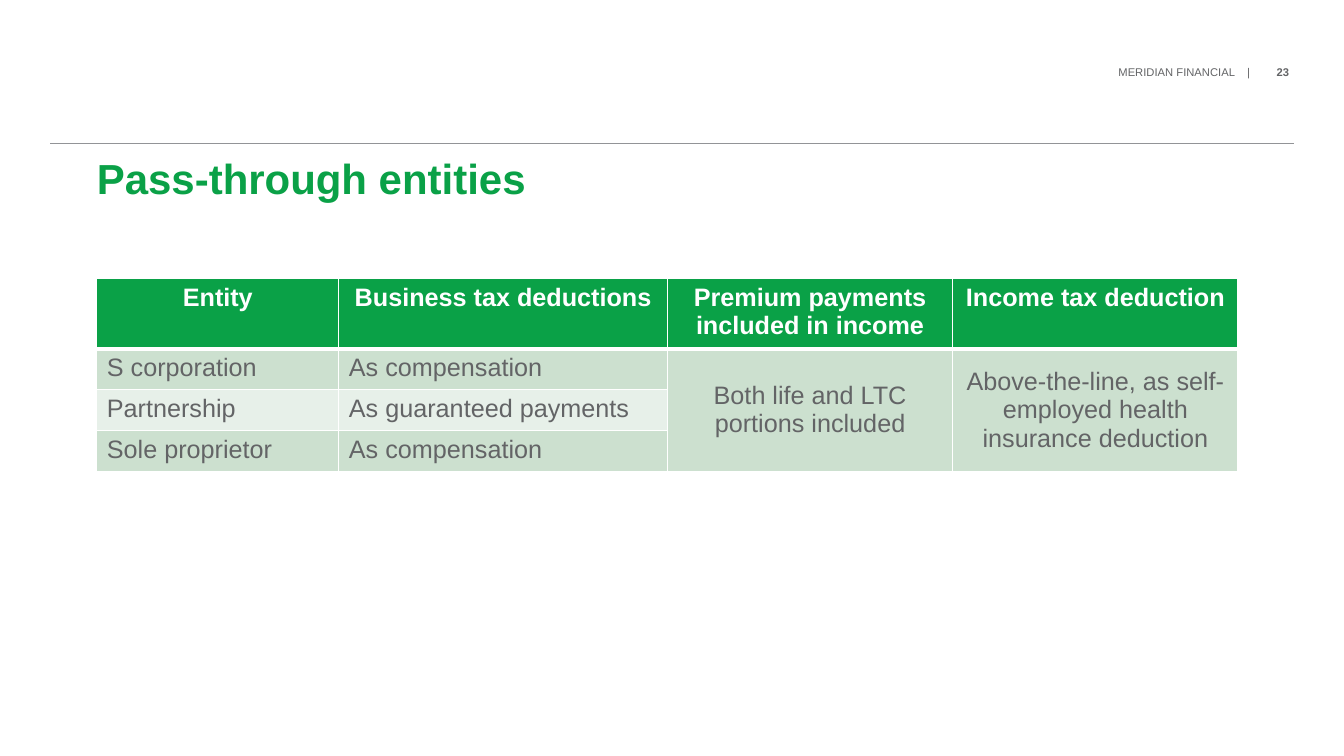
import pptx
import pptx.util
import pptx.dml.color
import pptx.enum.shapes
import pptx.enum.text
import pptx.oxml.ns
import lxml.etree

Cm = pptx.util.Cm
Pt = pptx.util.Pt
RGBColor = pptx.dml.color.RGBColor
ALIGN = pptx.enum.text.PP_ALIGN
ANCHOR = pptx.enum.text.MSO_ANCHOR
qn = pptx.oxml.ns.qn

GREEN = RGBColor(0x0A, 0xA1, 0x47)
GREY = RGBColor(0x63, 0x64, 0x66)
RULE_GREY = RGBColor(0x92, 0x94, 0x97)
WHITE = RGBColor(0xFF, 0xFF, 0xFF)
BAND_DARK = RGBColor(0xCC, 0xE0, 0xCF)
BAND_LIGHT = RGBColor(0xE7, 0xF0, 0xE9)

HEADINGS = ["Entity", "Business tax deductions",
            "Premium payments included in income", "Income tax deduction"]
ENTITIES = [
    ["S corporation", "As compensation", "Both life and LTC portions included",
     "Above-the-line, as self-employed health insurance deduction"],
    ["Partnership", "As guaranteed payments"],
    ["Sole proprietor", "As compensation"],
]
COLUMN_WIDTHS = [6.1, 8.28, 7.19, 7.19]
HEADER_HEIGHT = 1.68
ENTITY_HEIGHT = 1.03
FIRST_MERGED = 2


class EntitySlide:
    font_name = "Arial"

    def __init__(self, presentation):
        self.slide = presentation.slides.add_slide(presentation.slide_layouts[5])

    def style(self, paragraph, size, color, bold=False):
        paragraph.font.name = self.font_name
        paragraph.font.size = Pt(size)
        paragraph.font.color.rgb = color
        paragraph.font.bold = bold

    def clear_margins(self, frame):
        frame.margin_left = frame.margin_right = 0
        frame.margin_top = frame.margin_bottom = 0
        frame.word_wrap = True

    def title(self, text, left, top, width, height):
        heading = self.slide.shapes.title
        heading.left, heading.top = Cm(left), Cm(top)
        heading.width, heading.height = Cm(width), Cm(height)
        frame = heading.text_frame
        self.clear_margins(frame)
        frame.auto_size = pptx.enum.text.MSO_AUTO_SIZE.NONE
        frame.vertical_anchor = ANCHOR.TOP
        frame.text = text
        paragraph = frame.paragraphs[0]
        paragraph.alignment = ALIGN.LEFT
        paragraph.line_spacing = Pt(31)
        self.style(paragraph, 30, GREEN, True)

    def page_mark(self, company, number, left, top, width, height):
        mark = self.slide.shapes.add_textbox(Cm(left), Cm(top), Cm(width), Cm(height))
        self.clear_margins(mark.text_frame)
        paragraph = mark.text_frame.paragraphs[0]
        paragraph.alignment = ALIGN.RIGHT
        tabs = lxml.etree.SubElement(paragraph._p.get_or_add_pPr(), qn("a:tabLst"))
        lxml.etree.SubElement(tabs, qn("a:tab"), pos=str(Cm(3.99)), algn="l")
        self.style(paragraph, 8, GREY)
        paragraph.add_run().text = f"{company}    |\t"
        page = paragraph.add_run()
        page.text = number
        page.font.bold = True

    def rule(self, left, right, y):
        line = self.slide.shapes.add_connector(
            pptx.enum.shapes.MSO_CONNECTOR.STRAIGHT, Cm(left), Cm(y), Cm(right), Cm(y))
        line.line.color.rgb = RULE_GREY
        line.line.width = Pt(0.5)
        lxml.etree.SubElement(line._element.spPr, qn("a:effectLst"))

    def borders(self, cell, top, bottom):
        properties = cell._tc.get_or_add_tcPr()
        for side, width in (("L", 1), ("R", 1), ("T", top), ("B", bottom)):
            edge = lxml.etree.SubElement(properties, qn(f"a:ln{side}"), w=str(Pt(width)))
            fill = lxml.etree.SubElement(edge, qn("a:solidFill"))
            lxml.etree.SubElement(fill, qn("a:srgbClr"), val=str(WHITE))

    def table(self, left, top):
        heights = [HEADER_HEIGHT] + [ENTITY_HEIGHT] * len(ENTITIES)
        grid = self.slide.shapes.add_table(
            len(heights), len(COLUMN_WIDTHS), Cm(left), Cm(top),
            Cm(sum(COLUMN_WIDTHS)), Cm(sum(heights))).table
        for column, width in zip(grid.columns, COLUMN_WIDTHS):
            column.width = Cm(width)
        for row, height in zip(grid.rows, heights):
            row.height = Cm(height)
        for column in range(FIRST_MERGED, len(COLUMN_WIDTHS)):
            grid.cell(1, column).merge(grid.cell(len(ENTITIES), column))
        for r, texts in enumerate([HEADINGS] + ENTITIES):
            header = r == 0
            band = GREEN if header else BAND_DARK if r % 2 else BAND_LIGHT
            for c in range(len(COLUMN_WIDTHS)):
                cell = grid.cell(r, c)
                self.borders(cell, 3 if r == 1 else 1, 3 if header else 1)
                cell.fill.solid()
                cell.fill.fore_color.rgb = band
                if c >= len(texts):
                    continue
                merged = not header and c >= FIRST_MERGED
                cell.vertical_anchor = ANCHOR.MIDDLE if merged else ANCHOR.TOP
                cell.text = texts[c]
                paragraph = cell.text_frame.paragraphs[0]
                paragraph.alignment = ALIGN.CENTER if header or merged else ALIGN.LEFT
                self.style(paragraph, 18, WHITE if header else GREY, header)


def main():
    presentation = pptx.Presentation()
    presentation.slide_width = Cm(33.87)
    presentation.slide_height = Cm(19.05)
    page = EntitySlide(presentation)
    page.page_mark("MERIDIAN FINANCIAL", "23", 26.75, 1.65, 5.74, 0.38)
    page.rule(1.27, 32.61, 3.61)
    page.title("Pass-through entities", 2.44, 4.01, 28.78, 2.67)
    page.table(2.44, 7.01)
    presentation.save("out.pptx")


if __name__ == "__main__":
    main()
